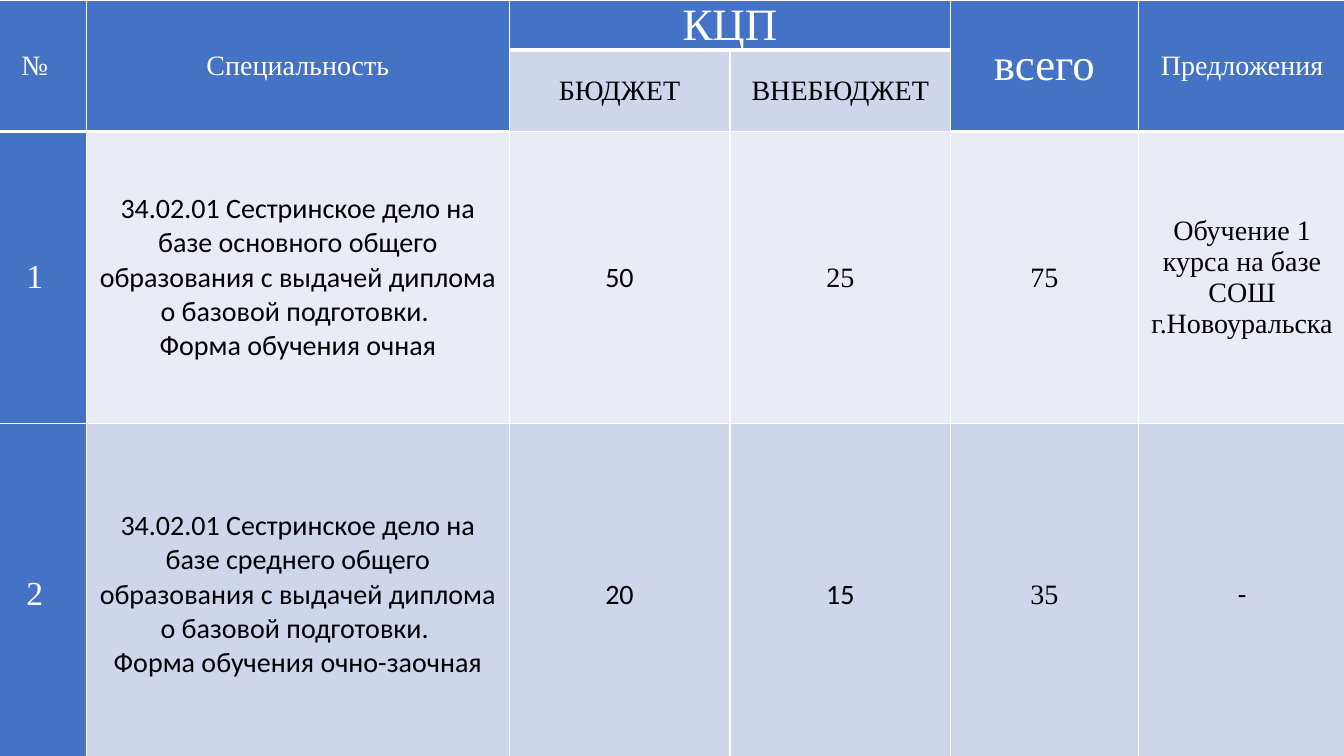
from pptx import Presentation
from pptx import util as u
from pptx.dml.color import RGBColor
from pptx.enum import text
from pptx.oxml import parse_xml
from pptx.oxml.ns import nsdecls

COLORS = {"header": "4472C4", "light": "E9EBF5", "dark": "CFD5EA",
          "white": "FFFFFF", "black": "000000"}
SERIF, SANS = "Times New Roman", "Calibri"
COLUMN_WIDTHS = [1.03, 4.19, 2.19, 2.19, 1.86, 2.06]
ROW_HEIGHTS = [0.4, 0.81, 2.9, 3.39]
MERGES = [((0, 0), (1, 0)), ((0, 1), (1, 1)), ((0, 2), (0, 3)),
          ((0, 4), (1, 4)), ((0, 5), (1, 5))]
HEADINGS = [("№", 20), ("Специальность", 20), ("КЦП", 32), None,
            ("всего", 32), ("Предложения", 20)]
SPECIALTY = ("34.02.01 Сестринское дело на базе {} общего образования "
             "с выдачей диплома о базовой подготовки. \nФорма обучения {}")
PROGRAMMES = [
    [("1", SERIF), (SPECIALTY.format("основного", "очная"), SANS), ("50", SANS),
     ("25", SERIF), ("75", SERIF),
     ("Обучение 1 курса на базе СОШ г.Новоуральска", SERIF)],
    [("2", SERIF), (SPECIALTY.format("среднего", "очно-заочная"), SANS), ("20", SANS),
     ("15", SANS), ("35", SERIF), ("-", SANS)],
]


def style_cell(cell, fill, bottom=1):
    """Give a cell its margins, white borders and fill."""
    cell.margin_left = cell.margin_right = u.Inches(0.07)
    cell.margin_top = cell.margin_bottom = 0
    cell.vertical_anchor = text.MSO_ANCHOR.MIDDLE
    properties = cell._tc.get_or_add_tcPr()
    for side, width in (("L", 1), ("R", 1), ("T", 1), ("B", bottom)):
        properties.append(parse_xml(
            f'<a:ln{side} {nsdecls("a")} w="{u.Pt(width)}"><a:solidFill>'
            f'<a:srgbClr val="{COLORS["white"]}"/></a:solidFill></a:ln{side}>'))
    cell.fill.solid()
    cell.fill.fore_color.rgb = RGBColor.from_string(COLORS[fill])


def write_cell(cell, wording, size=20, font=SERIF, color="black"):
    """Write centred text in a cell, one paragraph for each line."""
    cell.text = wording
    for para in cell.text_frame.paragraphs:
        para.alignment = text.PP_ALIGN.CENTER
        for span in para.runs:
            span.font.size = u.Pt(size)
            span.font.name = font
            span.font.bold = False
            span.font.color.rgb = RGBColor.from_string(COLORS[color])


def fill_header(table):
    """Fill the two heading rows."""
    for column, heading in enumerate(HEADINGS):
        style_cell(table.cell(0, column), "header", bottom=3)
        style_cell(table.cell(1, column), "dark" if column in (2, 3) else "header")
        if heading:
            wording, size = heading
            write_cell(table.cell(0, column), wording, size=size, color="white")
    write_cell(table.cell(1, 2), "БЮДЖЕТ")
    write_cell(table.cell(1, 3), "ВНЕБЮДЖЕТ")
    for first, last in MERGES:
        table.cell(*first).merge(table.cell(*last))


def fill_programmes(table):
    """Fill one row for each programme, numbered in the first column."""
    for row, (programme, band) in enumerate(zip(PROGRAMMES, ("light", "dark")), 2):
        for column, (wording, font) in enumerate(programme):
            cell = table.cell(row, column)
            numbered = column == 0
            style_cell(cell, "header" if numbered else band)
            write_cell(cell, wording, font=font, size=24 if numbered else 20,
                       color="white" if numbered else "black")


def add_admission_table(page, left, top, width, height):
    """Place the admission table in the given box."""
    frame = page.shapes.add_table(len(ROW_HEIGHTS), len(COLUMN_WIDTHS), u.Inches(left),
                                  u.Inches(top), u.Inches(width), u.Inches(height))
    table = frame.table
    for column, size in zip(table.columns, COLUMN_WIDTHS):
        column.width = u.Inches(size)
    for row, size in zip(table.rows, ROW_HEIGHTS):
        row.height = u.Inches(size)
    fill_header(table)
    fill_programmes(table)


def main():
    """Build and save the deck."""
    deck = Presentation()
    deck.slide_width, deck.slide_height = u.Inches(13.33), u.Inches(7.5)
    page = deck.slides.add_slide(deck.slide_layouts[6])
    add_admission_table(page, -0.17, 0, sum(COLUMN_WIDTHS), sum(ROW_HEIGHTS))
    deck.save("out.pptx")


if __name__ == "__main__":
    main()
